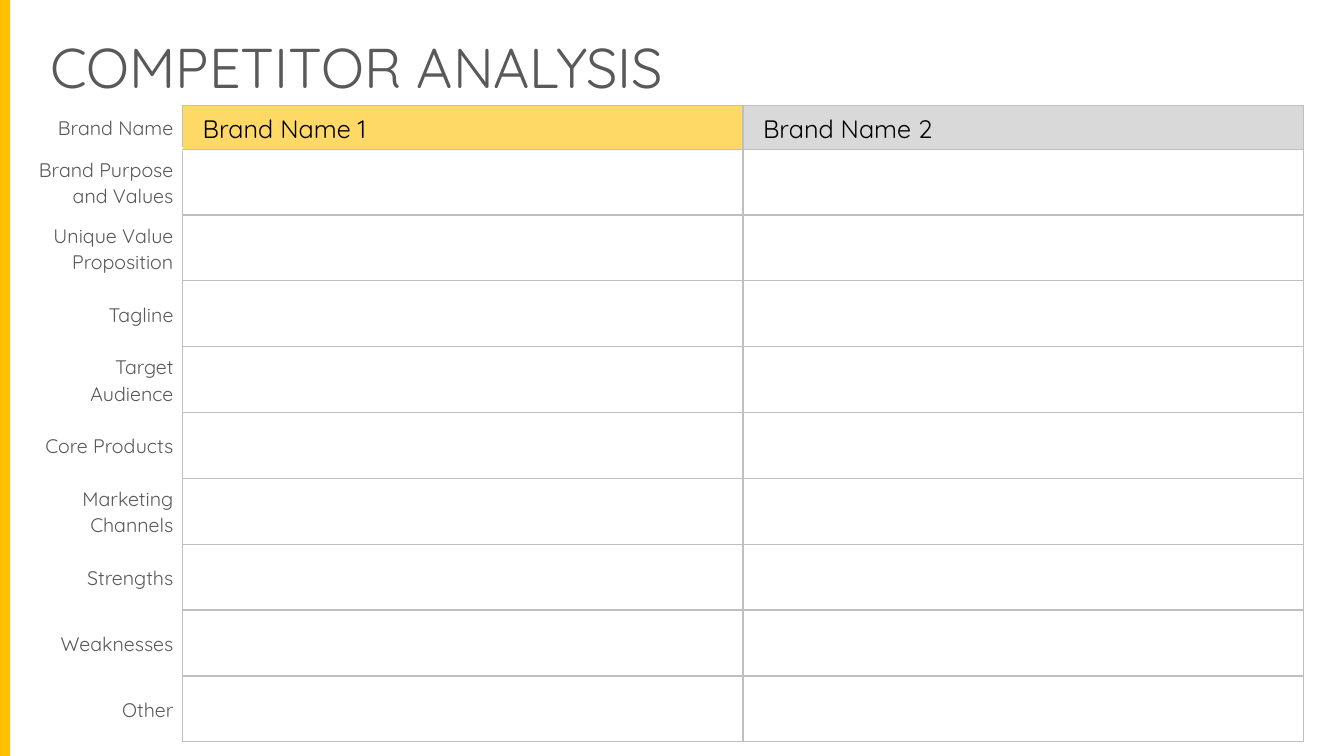
from lxml.etree import SubElement
from pptx import Presentation
from pptx.dml.color import RGBColor
from pptx.enum.shapes import MSO_SHAPE
from pptx.enum.text import MSO_ANCHOR, MSO_AUTO_SIZE, PP_ALIGN
from pptx.oxml.ns import qn
from pptx.util import Pt

TITLE = "COMPETITOR ANALYSIS"
BRANDS = [("Brand Name 1", "FFD966"), ("Brand Name 2", "D9D9D9")]
LABELS = [
    "Brand Name",
    "Brand Purpose and Values",
    "Unique Value Proposition",
    "Tagline",
    "Target Audience",
    "Core Products",
    "Marketing Channels",
    "Strengths",
    "Weaknesses",
    "Other",
]

FONT = "Quicksand"
GREY, BLACK, WHITE, RULE, ACCENT = "595959", "000000", "FFFFFF", "BFBFBF", "FFC000"
PAGE_WIDTH, PAGE_HEIGHT = 960, 540
TABLE_LEFT, TABLE_TOP = 15.2, 75.6
LABEL_WIDTH, BRAND_WIDTH = 115.2, 400.3
HEADER_HEIGHT, ROW_HEIGHT = 31, 47.04
SIDES = ("lnL", "lnR", "lnT", "lnB")


def paint(fill, color):
    fill.solid()
    fill.fore_color.rgb = RGBColor.from_string(color)


def add_span(para, text, size, color):
    span = para.add_run()
    span.text = text
    span.font.name = FONT
    span.font.size = Pt(size)
    paint(span.font.fill, color)


def set_borders(cell, colors, widths):
    properties = cell._tc.get_or_add_tcPr()
    for side, color, width in zip(SIDES, colors, widths):
        line = SubElement(properties, qn(f"a:{side}"), w=str(Pt(width)))
        SubElement(SubElement(line, qn("a:solidFill")), qn("a:srgbClr"), val=color)


def write_cell(cell, text, size, color, left, right, align):
    cell.vertical_anchor = MSO_ANCHOR.MIDDLE
    cell.margin_left, cell.margin_right = Pt(left), Pt(right)
    cell.margin_top = cell.margin_bottom = Pt(0)
    para = cell.text_frame.paragraphs[0]
    para.alignment = align
    para.line_spacing = 1.07
    add_span(para, text, size, color)


def add_title(page):
    box = page.shapes.add_textbox(Pt(28.8), Pt(19.4), Pt(460.8), Pt(55.4))
    box.text_frame.word_wrap = False
    box.text_frame.auto_size = MSO_AUTO_SIZE.SHAPE_TO_FIT_TEXT
    add_span(box.text_frame.paragraphs[0], TITLE, 40, GREY)


def add_side_bar(page):
    bar = page.shapes.add_shape(MSO_SHAPE.RECTANGLE, Pt(0), Pt(0), Pt(7.2), Pt(PAGE_HEIGHT))
    bar.shadow.inherit = False
    paint(bar.fill, ACCENT)
    bar.line.fill.background()


def add_analysis(page):
    widths = [LABEL_WIDTH] + [BRAND_WIDTH] * len(BRANDS)
    heights = [HEADER_HEIGHT] + [ROW_HEIGHT] * (len(LABELS) - 1)
    table = page.shapes.add_table(
        len(heights), len(widths), Pt(TABLE_LEFT), Pt(TABLE_TOP), Pt(sum(widths)), Pt(sum(heights))
    ).table
    table.first_row = table.horz_banding = False
    for column, width in zip(table.columns, widths):
        column.width = Pt(width)
    for row, height in zip(table.rows, heights):
        row.height = Pt(height)

    for index, label in enumerate(LABELS):
        label_cell = table.cell(index, 0)
        bottom = 3 if index == 0 else 1
        set_borders(label_cell, (WHITE, RULE, WHITE, WHITE), (1, 1, 1, bottom))
        label_cell.fill.background()
        write_cell(label_cell, label, 14, GREY, 5, 6.5, PP_ALIGN.RIGHT)
        for position, (brand, color) in enumerate(BRANDS, 1):
            cell = table.cell(index, position)
            set_borders(cell, [RULE] * 4, [1] * 4)
            if index == 0:
                paint(cell.fill, color)
                write_cell(cell, brand, 18, BLACK, 14.4, 4.3, PP_ALIGN.LEFT)
            else:
                cell.fill.background()


def main():
    deck = Presentation()
    deck.slide_width, deck.slide_height = Pt(PAGE_WIDTH), Pt(PAGE_HEIGHT)
    page = deck.slides.add_slide(deck.slide_layouts[6])
    paint(page.background.fill, WHITE)
    add_title(page)
    add_side_bar(page)
    add_analysis(page)
    deck.save("out.pptx")


if __name__ == "__main__":
    main()
